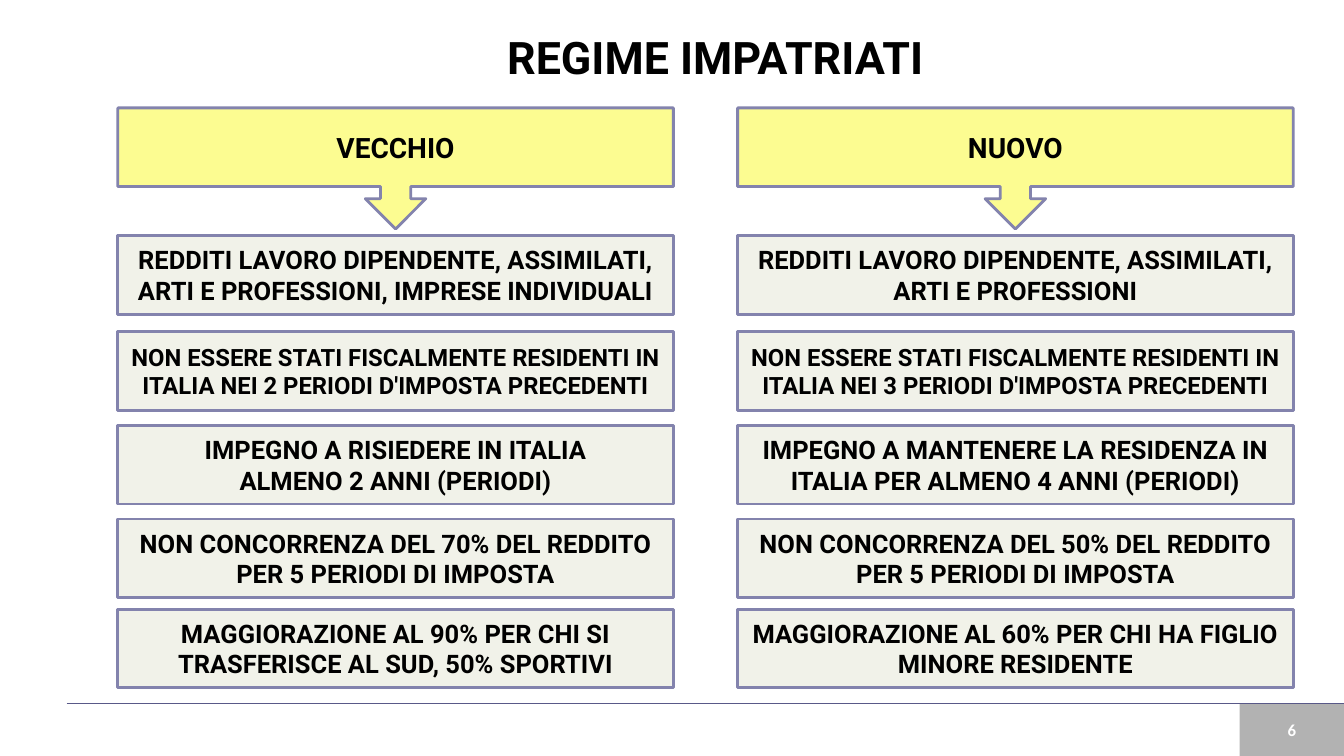
import dataclasses

import pptx
import pptx.dml.color
import pptx.enum.shapes
import pptx.enum.text
import pptx.oxml
import pptx.oxml.ns
import pptx.util

Cm = pptx.util.Cm
Pt = pptx.util.Pt
Shape = pptx.enum.shapes.MSO_SHAPE
Text = pptx.enum.text


@dataclasses.dataclass(frozen=True)
class Theme:
    font: str = "Roboto"
    num_font: str = "Calibri"
    ink: str = "000000"
    white: str = "FFFFFF"
    yellow: str = "FCFC91"
    cream: str = "F1F2E9"
    edge: str = "8383AD"
    rule: str = "595988"
    title: float = 32
    head: float = 20
    body: float = 18.2
    tight: float = 17
    num: float = 12


THEME = Theme()

# Column and row grid, in centimetres
WIDTH, HEIGHT = 14, 1.98
HEAD_TOP, HEAD_HEIGHT = 2.72, 3.05
TOPS = [5.94, 8.36, 10.72, 13.08, 15.35]
SIZES = [THEME.body, THEME.tight, THEME.body, THEME.body, THEME.body]

COLUMNS = [
    (2.97, "VECCHIO", [
        ["REDDITI LAVORO DIPENDENTE, ASSIMILATI, ARTI E PROFESSIONI, IMPRESE INDIVIDUALI"],
        ["NON ESSERE STATI FISCALMENTE RESIDENTI IN ITALIA NEI 2 PERIODI D'IMPOSTA PRECEDENTI"],
        ["IMPEGNO A RISIEDERE IN ITALIA", "ALMENO 2 ANNI (PERIODI)"],
        ["NON CONCORRENZA DEL 70% DEL REDDITO PER 5 PERIODI DI IMPOSTA"],
        ["MAGGIORAZIONE AL 90% PER CHI SI TRASFERISCE AL SUD, 50% SPORTIVI"],
    ]),
    (18.59, "NUOVO", [
        ["REDDITI LAVORO DIPENDENTE, ASSIMILATI, ARTI E PROFESSIONI"],
        ["NON ESSERE STATI FISCALMENTE RESIDENTI IN ITALIA NEI 3 PERIODI D'IMPOSTA PRECEDENTI"],
        ["IMPEGNO A MANTENERE LA RESIDENZA IN ITALIA PER ALMENO 4 ANNI (PERIODI)"],
        ["NON CONCORRENZA DEL 50% DEL REDDITO PER 5 PERIODI DI IMPOSTA"],
        ["MAGGIORAZIONE AL 60% PER CHI HA FIGLIO MINORE RESIDENTE"],
    ]),
]


def color(code):
    return pptx.dml.color.RGBColor.from_string(code)


def write(shape, lines, size, ink=THEME.ink, font=THEME.font):
    """Centre bold lines in a shape, one paragraph each."""
    frame = shape.text_frame
    frame.word_wrap = True
    frame.auto_size = Text.MSO_AUTO_SIZE.NONE
    frame.vertical_anchor = Text.MSO_ANCHOR.MIDDLE
    for index, line in enumerate(lines):
        para = frame.add_paragraph() if index else frame.paragraphs[0]
        para.alignment = Text.PP_ALIGN.CENTER
        para.space_before = Pt(0)
        run = para.add_run()
        run.text = line
        run.font.name = font
        run.font.size = Pt(size)
        run.font.bold = True
        run.font.color.rgb = color(ink)


def add_box(slide, kind, left, top, width, height, fill, edge=None):
    box = slide.shapes.add_shape(kind, Cm(left), Cm(top), Cm(width), Cm(height))
    box.shadow.inherit = False
    box.fill.solid()
    box.fill.fore_color.rgb = color(fill)
    if edge:
        box.line.color.rgb = color(edge)
        box.line.width = Pt(2)
    else:
        box.line.fill.background()
    return box


def add_title(slide, text):
    title = slide.shapes.title
    title.left, title.top = Cm(2.18), Cm(0.66)
    title.width, title.height = Cm(31.7), Cm(1.52)
    write(title, [text], THEME.title)


def add_foot(slide, number):
    # Number block: black at 30 % opacity
    block = add_box(slide, Shape.RECTANGLE, 31.24, 17.73, 2.63, 1.32, THEME.ink)
    fill = block.fill._xPr.find(pptx.oxml.ns.qn("a:solidFill"))
    alpha = pptx.oxml.parse_xml(
        f'<a:alpha {pptx.oxml.ns.nsdecls("a")} val="30000"/>')
    fill[0].append(alpha)
    write(block, [number], THEME.num, THEME.white, THEME.num_font)

    # Rule above the footer
    rule = slide.shapes.add_connector(
        pptx.enum.shapes.MSO_CONNECTOR.STRAIGHT,
        Cm(1.68), Cm(17.73), Cm(33.87), Cm(17.73))
    rule.line.color.rgb = color(THEME.rule)
    rule.line.width = Pt(1)
    rule._element.spPr.append(pptx.oxml.parse_xml(
        f'<a:effectLst {pptx.oxml.ns.nsdecls("a")}/>'))


def add_column(slide, left, head, rows):
    # Callout pointing down to the rows
    callout = add_box(slide, Shape.DOWN_ARROW_CALLOUT, left, HEAD_TOP,
                      WIDTH, HEAD_HEIGHT, THEME.yellow, THEME.edge)
    write(callout, [head], THEME.head)

    # Rules of the regime
    for top, size, lines in zip(TOPS, SIZES, rows):
        box = add_box(slide, Shape.RECTANGLE, left, top, WIDTH, HEIGHT,
                      THEME.cream, THEME.edge)
        write(box, lines, size)


def main():
    deck = pptx.Presentation()
    deck.slide_width, deck.slide_height = Cm(33.87), Cm(19.05)
    slide = deck.slides.add_slide(deck.slide_layouts[5])

    add_foot(slide, "6")
    add_title(slide, "REGIME IMPATRIATI")
    for left, head, rows in COLUMNS:
        add_column(slide, left, head, rows)

    deck.save("out.pptx")


if __name__ == "__main__":
    main()
